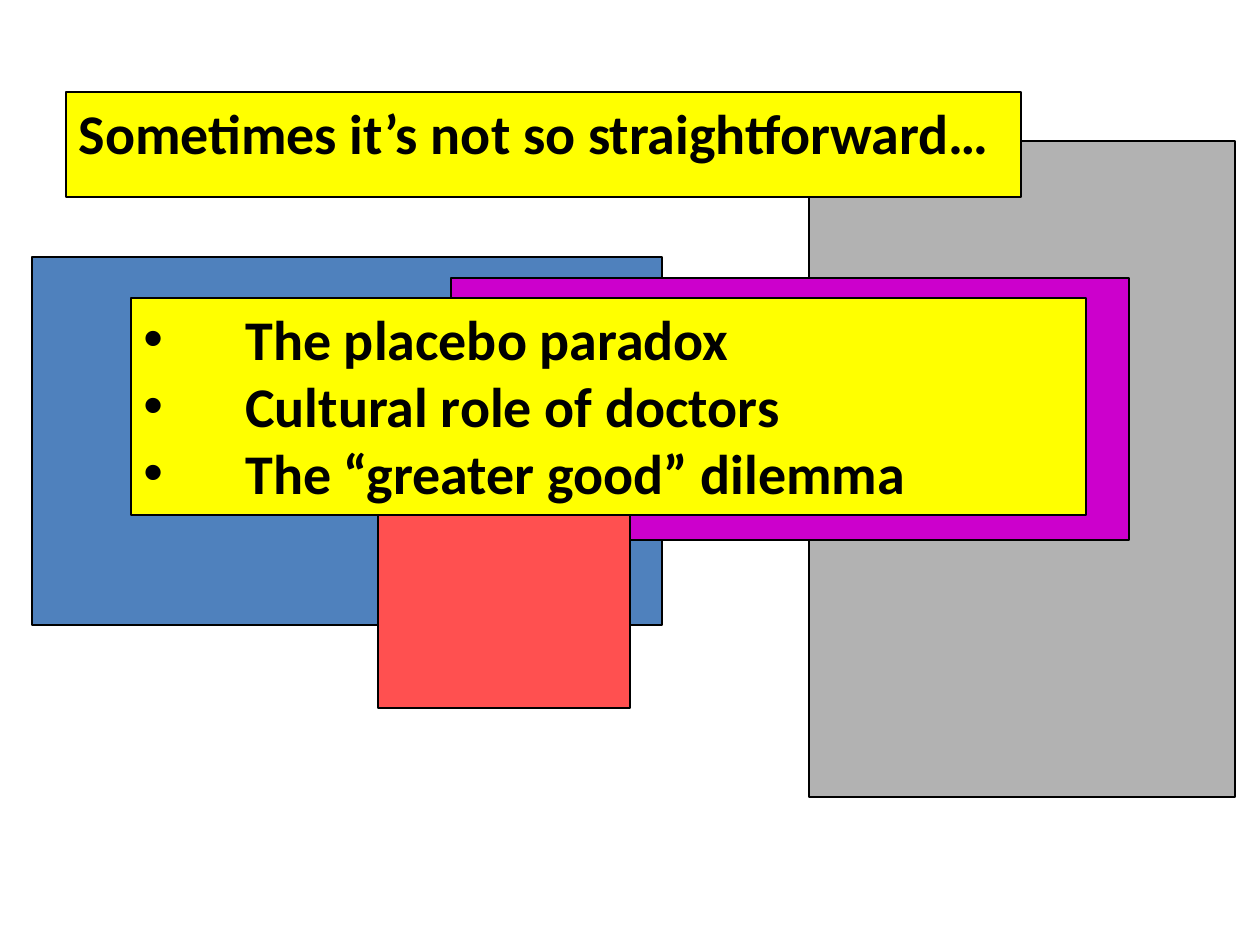
from dataclasses import dataclass

from lxml.etree import SubElement
from pptx import Presentation
from pptx.dml.color import RGBColor
from pptx.enum.shapes import MSO_SHAPE
from pptx.enum.text import MSO_ANCHOR, MSO_AUTO_SIZE as AUTO_SIZE, PP_ALIGN
from pptx.oxml.ns import qn
from pptx.util import Emu, Pt

PX_PER_INCH = 126
COLORS = {
    "blue": "4F81BD",
    "grey": "B2B2B2",
    "purple": "CC00CC",
    "red": "FF5050",
    "yellow": "FFFF00",
    "black": "000000",
}


@dataclass(frozen=True)
class Box:
    left: int
    top: int
    width: int
    height: int
    fill: str


BACKDROP = [
    Box(32, 257, 630, 368, "blue"),
    Box(809, 141, 426, 656, "grey"),
    Box(451, 278, 678, 262, "purple"),
    Box(378, 393, 252, 315, "red"),
]
TITLE_BOX = Box(66, 92, 955, 80, "yellow")
LIST_BOX = Box(131, 298, 955, 217, "yellow")
TOPICS = ["The placebo paradox", "Cultural role of doctors", "The “greater good” dilemma"]


def px(n: int) -> Emu:
    return Emu(round(n * 914400 / PX_PER_INCH))


def rgb(name: str) -> RGBColor:
    return RGBColor.from_string(COLORS[name])


def bounds(box: Box) -> tuple[Emu, Emu, Emu, Emu]:
    return px(box.left), px(box.top), px(box.width), px(box.height)


def paint(sp, box: Box) -> None:
    """Fill a shape and give it a thin black outline."""
    sp.fill.solid()
    sp.fill.fore_color.rgb = rgb(box.fill)
    sp.line.color.rgb = rgb("black")
    sp.line.width = Pt(0.75)


def add_rect(shapes, box: Box) -> None:
    sp = shapes.add_shape(MSO_SHAPE.RECTANGLE, *bounds(box))
    sp.shadow.inherit = False
    paint(sp, box)


def write(tf, lines: list[str], *, size: int = 32, bold: bool = True,
          font: str = "Calibri", color: str = "black", bullet_indent: int = 0) -> None:
    tf.word_wrap = True
    tf.auto_size = AUTO_SIZE.SHAPE_TO_FIT_TEXT
    tf.vertical_anchor = MSO_ANCHOR.TOP
    for i, line in enumerate(lines):
        p = tf.add_paragraph() if i else tf.paragraphs[0]
        p.alignment = PP_ALIGN.LEFT
        r = p.add_run()
        r.text = line
        r.font.size, r.font.bold, r.font.name = Pt(size), bold, font
        r.font.color.rgb = rgb(color)
        if bullet_indent:
            pPr = p._p.get_or_add_pPr()
            pPr.set("marL", str(px(bullet_indent)))
            pPr.set("indent", str(-px(bullet_indent)))
            SubElement(pPr, qn("a:buFont"), typeface="Arial")
            SubElement(pPr, qn("a:buChar"), char="•")


def main() -> None:
    prs = Presentation()
    prs.slide_width, prs.slide_height = px(1260), px(945)
    slide = prs.slides.add_slide(prs.slide_layouts[5])
    shapes = slide.shapes

    # Overlapping coloured rectangles
    group = shapes.add_group_shape()
    for box in BACKDROP:
        add_rect(group.shapes, box)

    # Bulleted topics
    topics = shapes.add_textbox(*bounds(LIST_BOX))
    paint(topics, LIST_BOX)
    write(topics.text_frame, TOPICS, bullet_indent=102)

    # Title, brought in front of the rectangles
    title = shapes.title
    title.left, title.top, title.width, title.height = bounds(TITLE_BOX)
    paint(title, TITLE_BOX)
    write(title.text_frame, ["Sometimes it’s not so straightforward…"])
    topics._element.addnext(title._element)

    prs.save("out.pptx")


if __name__ == "__main__":
    main()
